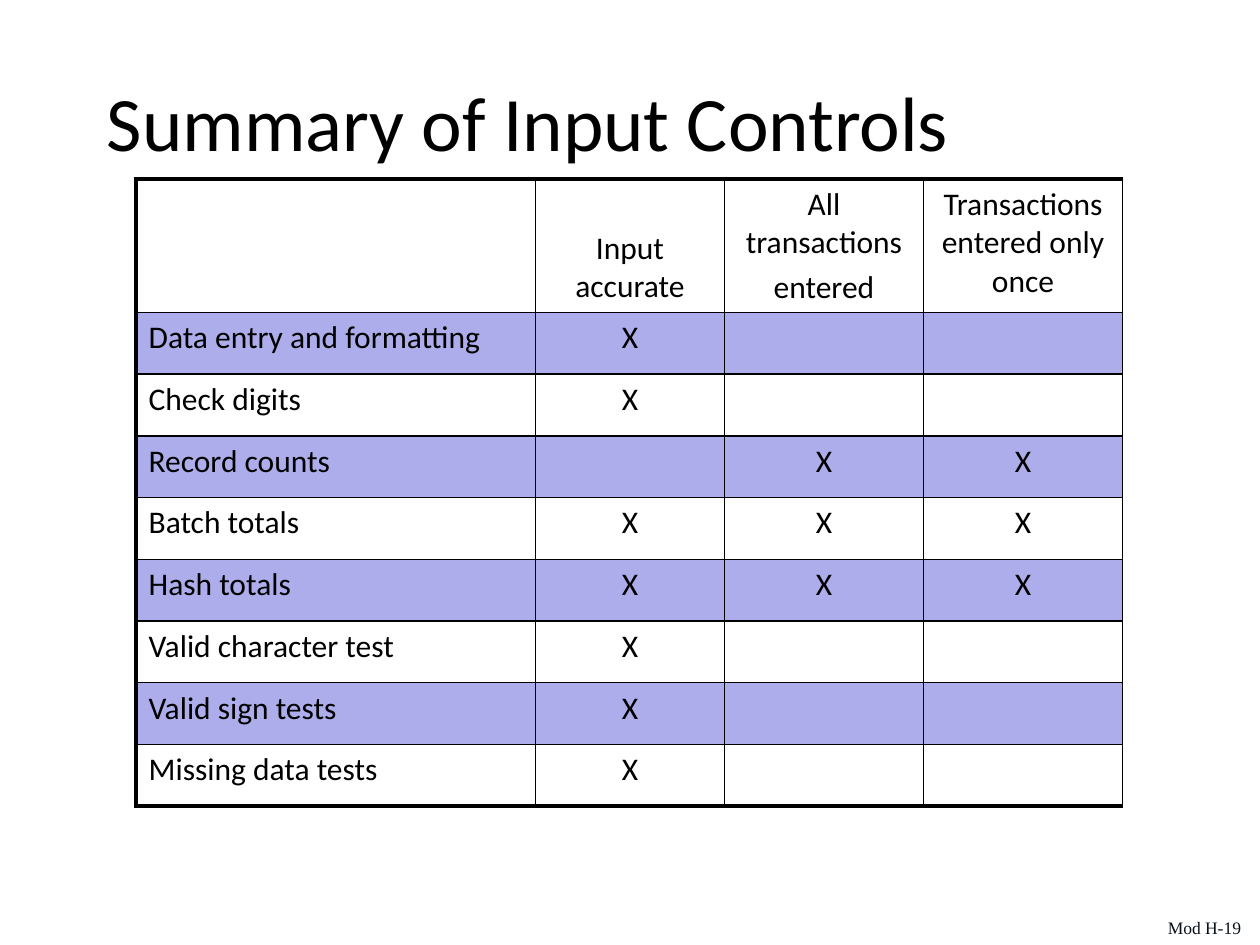
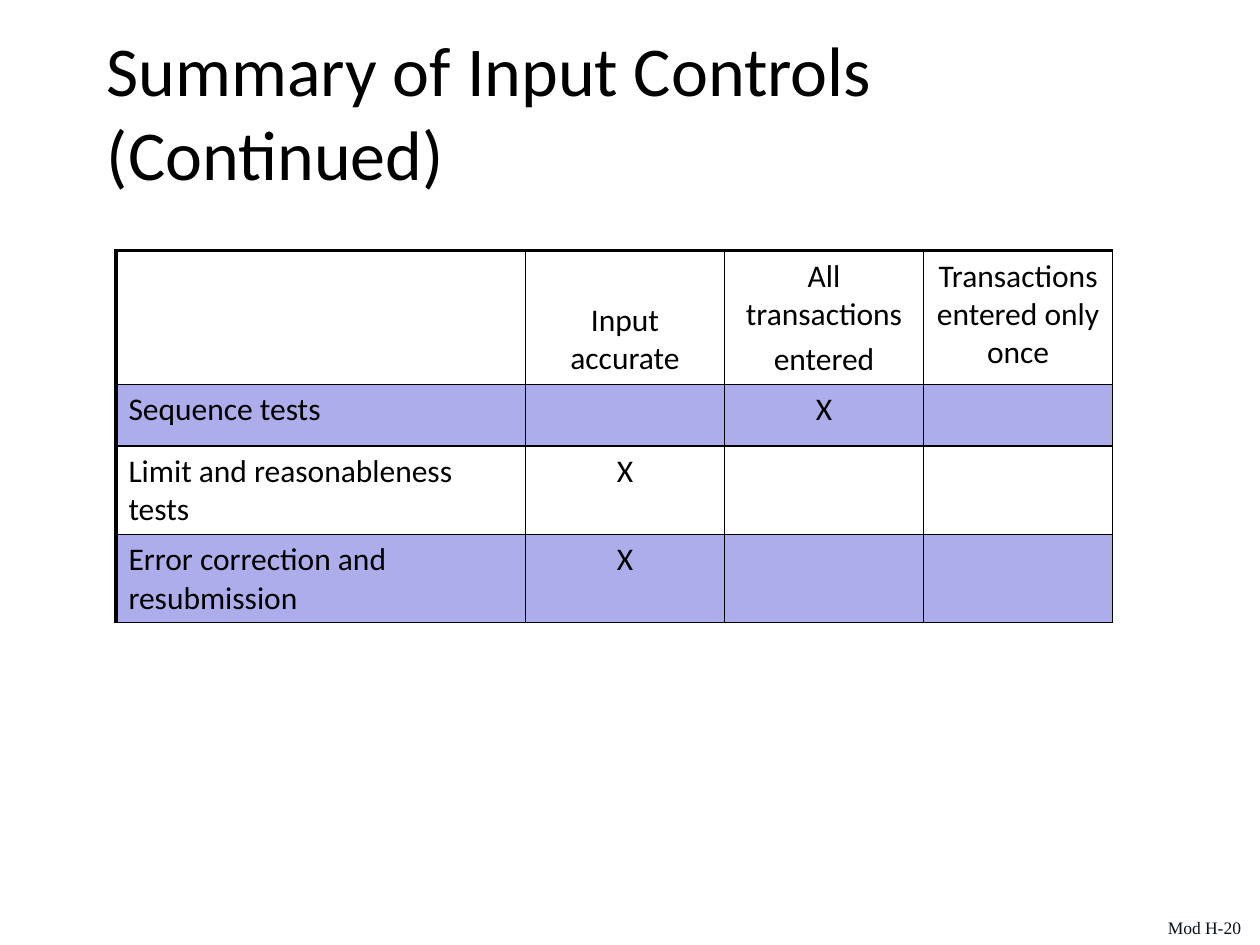
from dataclasses import dataclass

from lxml import etree
from pptx import Presentation
from pptx.dml.color import RGBColor
from pptx.enum.text import MSO_ANCHOR, MSO_AUTO_SIZE, PP_ALIGN
from pptx.oxml.ns import qn
from pptx.slide import Slide
from pptx.table import _Cell
from pptx.text.text import TextFrame
from pptx.util import Inches, Pt

LEFT = PP_ALIGN.LEFT
CENTER = PP_ALIGN.CENTER
TOP = MSO_ANCHOR.TOP
MIDDLE = MSO_ANCHOR.MIDDLE
BOTTOM = MSO_ANCHOR.BOTTOM
FIT_SHAPE = MSO_AUTO_SIZE.SHAPE_TO_FIT_TEXT

BODY_FONT = "Calibri"
FOOTER_FONT = "Times New Roman"
BLACK = "000000"
FOOTER_COLOR = "091019"
BAND_COLOR = "ADADEB"

THIN = 1
THICK = 2.25
HEADER_HEIGHT = 1.06
LINE_HEIGHT = 0.49
TWO_LINE_HEIGHT = 0.7
HEADERS = (
    "",
    "Input accurate",
    "All transactions\nentered",
    "Transactions entered only once",
)


@dataclass(frozen=True)
class Control:
    name: str
    marks: str
    height: float = LINE_HEIGHT


@dataclass(frozen=True)
class ControlSlide:
    title: str
    title_size: float
    title_top: float
    table_left: float
    table_top: float
    column_widths: tuple[float, ...]
    controls: tuple[Control, ...]
    bottom_border: float
    footer: str


CONTROL_SLIDES = (
    ControlSlide(
        title="Summary of Input Controls",
        title_size=44,
        title_top=0.33,
        table_left=1.08,
        table_top=1.42,
        column_widths=(3.17, 1.5, 1.58, 1.58),
        controls=(
            Control("Data entry and formatting", "X--"),
            Control("Check digits", "X--"),
            Control("Record counts", "-XX"),
            Control("Batch totals", "XXX"),
            Control("Hash totals", "XXX"),
            Control("Valid character test", "X--"),
            Control("Valid sign tests", "X--"),
            Control("Missing data tests", "X--"),
        ),
        bottom_border=THICK,
        footer="Mod H-19",
    ),
    ControlSlide(
        title="Summary of Input Controls (Continued)",
        title_size=40,
        title_top=0.25,
        table_left=0.92,
        table_top=1.99,
        column_widths=(3.25, 1.58, 1.58, 1.5),
        controls=(
            Control("Sequence tests", "-X-"),
            Control("Limit and reasonableness tests", "X--", TWO_LINE_HEIGHT),
            Control("Error correction and resubmission", "X--", TWO_LINE_HEIGHT),
        ),
        bottom_border=THIN,
        footer="Mod H-20",
    ),
)


def rgb(color: str) -> RGBColor:
    return RGBColor.from_string(color)


def write_text(
    text_frame: TextFrame,
    text: str,
    *,
    size: float = 18,
    font: str = BODY_FONT,
    color: str = BLACK,
    align: PP_ALIGN = LEFT,
    space_before: float = 0,
) -> None:
    for index, line in enumerate(text.split("\n")):
        paragraph = text_frame.add_paragraph() if index else text_frame.paragraphs[0]
        paragraph.alignment = align
        paragraph.space_before = Pt(space_before)
        run = paragraph.add_run()
        run.text = line
        run.font.size = Pt(size)
        run.font.name = font
        run.font.color.rgb = rgb(color)


def add_title(slide: Slide, content: ControlSlide) -> None:
    shape = slide.shapes.add_textbox(
        Inches(0.75), Inches(content.title_top), Inches(7.67), Inches(1.25)
    )
    shape.text_frame.word_wrap = True
    shape.text_frame.vertical_anchor = MIDDLE
    write_text(shape.text_frame, content.title, size=content.title_size)


def add_footer(slide: Slide, text: str) -> None:
    shape = slide.shapes.add_textbox(
        Inches(9.17), Inches(7.23), Inches(0.92), Inches(0.27)
    )
    shape.text_frame.word_wrap = True
    shape.text_frame.auto_size = FIT_SHAPE
    write_text(shape.text_frame, text, size=10, font=FOOTER_FONT, color=FOOTER_COLOR)


def set_borders(
    cell: _Cell, *, left: float, right: float, top: float, bottom: float
) -> None:
    properties = cell._tc.get_or_add_tcPr()
    sides = {"a:lnL": left, "a:lnR": right, "a:lnT": top, "a:lnB": bottom}
    for tag, width in sides.items():
        line = etree.SubElement(properties, qn(tag), w=str(Pt(width)))
        fill = etree.SubElement(line, qn("a:solidFill"))
        etree.SubElement(fill, qn("a:srgbClr"), val=BLACK)


def fill_cell(cell: _Cell, text: str, row: int, column: int) -> None:
    if row % 2:
        cell.fill.solid()
        cell.fill.fore_color.rgb = rgb(BAND_COLOR)
    else:
        cell.fill.background()
    cell.vertical_anchor = BOTTOM if text == "Input accurate" else TOP
    if text:
        align = CENTER if column else LEFT
        write_text(cell.text_frame, text, align=align, space_before=3.6)


def add_control_table(slide: Slide, content: ControlSlide) -> None:
    rows = [HEADERS]
    for control in content.controls:
        rows.append((control.name, *control.marks.replace("-", " ")))
    heights = [HEADER_HEIGHT, *(control.height for control in content.controls)]
    table = slide.shapes.add_table(
        len(rows),
        len(HEADERS),
        Inches(content.table_left),
        Inches(content.table_top),
        Inches(sum(content.column_widths)),
        Inches(sum(heights)),
    ).table
    table.first_row = False
    table.horz_banding = False
    for column, width in zip(table.columns, content.column_widths):
        column.width = Inches(width)
    for row, height in zip(table.rows, heights):
        row.height = Inches(height)
    last_row = len(rows) - 1
    for row_index, texts in enumerate(rows):
        for column_index, text in enumerate(texts):
            cell = table.cell(row_index, column_index)
            set_borders(
                cell,
                left=THIN if column_index else THICK,
                right=THIN,
                top=THIN if row_index else THICK,
                bottom=content.bottom_border if row_index == last_row else THIN,
            )
            fill_cell(cell, text.strip(), row_index, column_index)


def main() -> None:
    presentation = Presentation()
    presentation.slide_width = Inches(10)
    presentation.slide_height = Inches(7.5)
    blank_layout = presentation.slide_layouts[6]
    for content in CONTROL_SLIDES:
        slide = presentation.slides.add_slide(blank_layout)
        add_title(slide, content)
        add_control_table(slide, content)
        add_footer(slide, content.footer)
    presentation.save("out.pptx")


if __name__ == "__main__":
    main()
